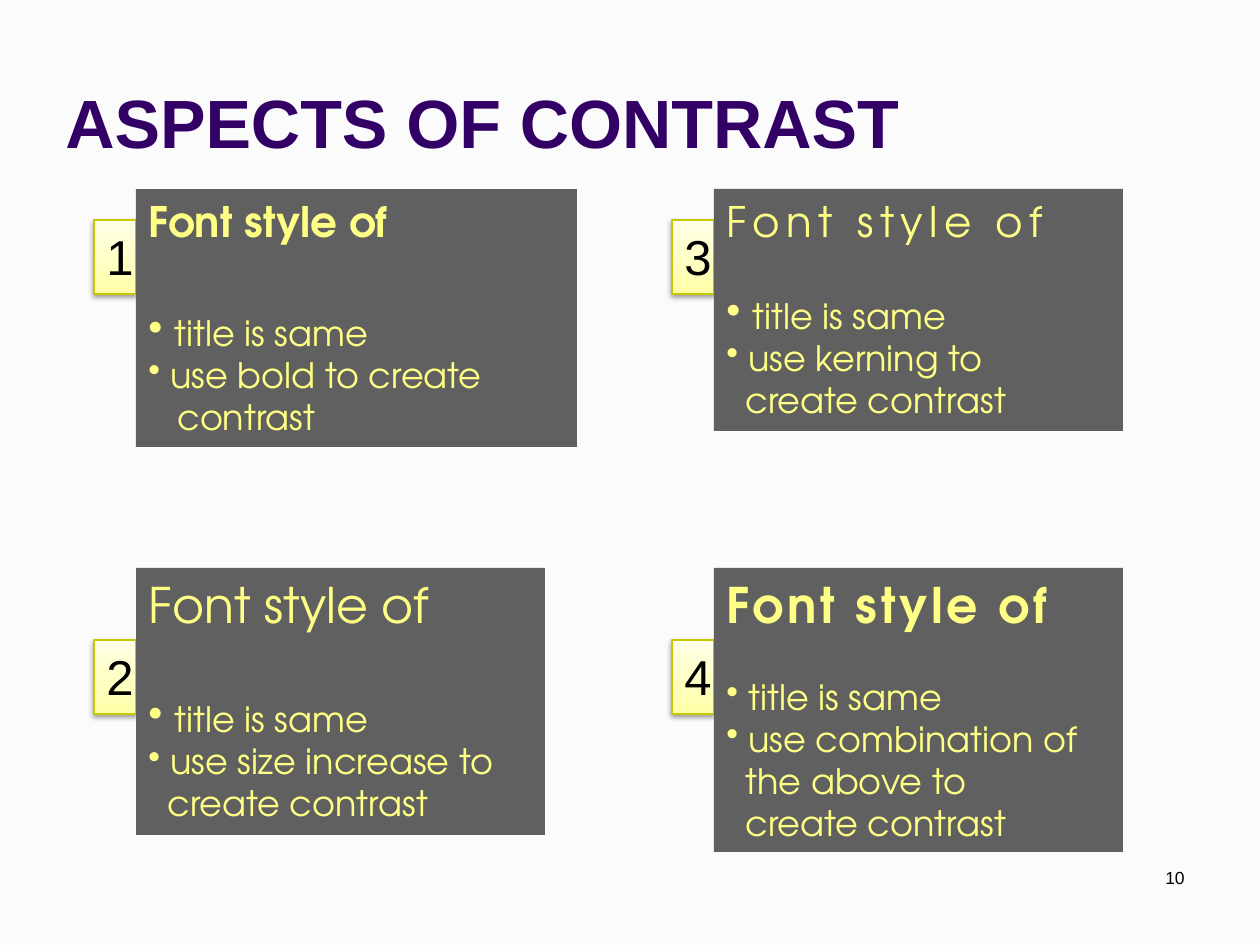
from pptx import Presentation
from pptx.dml.color import RGBColor
from pptx.enum.shapes import MSO_SHAPE
from pptx.enum.text import MSO_ANCHOR, PP_ALIGN
from pptx.oxml import parse_xml
from pptx.oxml.ns import nsdecls
from pptx.util import Emu, Pt

RECT = MSO_SHAPE.RECTANGLE
TOP, BOTTOM = MSO_ANCHOR.TOP, MSO_ANCHOR.BOTTOM
LEFT, RIGHT = PP_ALIGN.LEFT, PP_ALIGN.RIGHT

# Content
TITLE = "ASPECTS OF CONTRAST"
PAGE = "10"
HEAD = "Font style of"
FIRST = "title is same"
# gap: points above the list; mark: bullet size of its first line in percent
# hang: px indent of first line, second line and the lines that follow
CARDS = [
    dict(num="1", col=0, row=0, w=441, h=258, size=24, bold=True, track=0,
         gap=37.5, mark=120, hang=(26, 22, 29),
         lines=["use bold to create", "contrast"]),
    dict(num="2", col=0, row=1, w=409, h=267, size=28, bold=False, track=0,
         gap=37, mark=120, hang=(26, 22, 19),
         lines=["use size increase to", "create contrast"]),
    dict(num="3", col=1, row=0, w=409, h=242, size=24, bold=False, track=360,
         gap=28, mark=120, hang=(26, 22, 19),
         lines=["use kerning to", "create contrast"]),
    dict(num="4", col=1, row=1, w=409, h=284, size=28, bold=True, track=200,
         gap=24, mark=100, hang=(22, 22, 19),
         lines=["use combination of", "the above to", "create contrast"]),
]

# Theme
THEME = dict(
    back="FBFBFB", title="330066", ink="000000", card="606060",
    text="FFFF85", edge="C8C800",
    glow=[(0, "FFFFA5"), (35, "FFFFBF"), (100, "FFFFE7")],
    sans="Arial", round="TeX Gyre Adventor",
    big=39, badge=28, body=20, small=10,
)

# Layout in px
SCALE = 914400 / 126
COLS, ROWS = (136, 714), (189, 568)
BADGE_TOPS = (220, 640)
BADGE_W, BADGE_H = 42, 74


def px(n):
    return Emu(round(n * SCALE))


def rgb(name):
    return RGBColor.from_string(THEME[name])


def write(para, text, face, size, color, bold=False, align=LEFT):
    para.alignment = align
    run = para.add_run()
    run.text = text
    style = dict(name=THEME[face], size=Pt(size), bold=bold)
    for key, val in style.items():
        setattr(run.font, key, val)
    run.font.color.rgb = rgb(color)
    return run


def label(slide, box, text, size, color, bold=False, align=LEFT, anchor=TOP):
    frame = slide.shapes.add_textbox(*map(px, box)).text_frame
    frame.word_wrap = True
    frame.vertical_anchor = anchor
    write(frame.paragraphs[0], text, "sans", size, color, bold, align)


def block(slide, *box):
    shape = slide.shapes.add_shape(RECT, *map(px, box))
    shape.shadow.inherit = False
    shape.text_frame.word_wrap = True
    shape.text_frame.vertical_anchor = TOP
    return shape


def badge(slide, card):
    shape = block(slide, COLS[card["col"]] - BADGE_W, BADGE_TOPS[card["row"]],
                  BADGE_W, BADGE_H)
    shape.line.color.rgb = rgb("edge")
    shape.line.width = Pt(0.75)
    # Gradient from the bottom up, and a soft shadow
    stops = "".join(
        f'<a:gs pos="{pos * 1000}"><a:srgbClr val="{color}"/></a:gs>'
        for pos, color in THEME["glow"])
    props = shape.element.spPr
    props.insert(2, parse_xml(
        f'<a:gradFill {nsdecls("a")} rotWithShape="1"><a:gsLst>{stops}</a:gsLst>'
        '<a:lin ang="16200000" scaled="0"/></a:gradFill>'))
    props[-1].append(parse_xml(
        f'<a:outerShdw {nsdecls("a")} blurRad="{Pt(3.1)}" dist="{Pt(1.6)}" '
        'dir="5400000" rotWithShape="0"><a:srgbClr val="000000">'
        '<a:alpha val="38000"/></a:srgbClr></a:outerShdw>'))
    write(shape.text_frame.paragraphs[0], card["num"], "sans",
          THEME["badge"], "ink")


def bullet(para, hang, mark):
    props = para._p.get_or_add_pPr()
    props.set("marL", str(px(hang)))
    props.set("indent", str(-px(hang) if mark else 0))
    if mark:
        for tag in (f'buSzPct {nsdecls("a")} val="{mark * 1000}"',
                    f'buChar {nsdecls("a")} char="•"'):
            props.append(parse_xml(f"<a:{tag}/>"))


def panel(slide, card):
    shape = block(slide, COLS[card["col"]], ROWS[card["row"]],
                  card["w"], card["h"])
    shape.fill.solid()
    shape.fill.fore_color.rgb = rgb("card")
    shape.line.fill.background()
    frame = shape.text_frame
    head = write(frame.paragraphs[0], HEAD, "round", card["size"], "text",
                 card["bold"])
    if card["track"]:
        head.font._element.set("spc", str(card["track"]))
    marks = (card["mark"], 100, 0)
    for i, text in enumerate([FIRST] + card["lines"]):
        para = frame.add_paragraph()
        step = min(i, 2)
        bullet(para, card["hang"][step], marks[step])
        if i == 0:
            para.space_before = Pt(card["gap"])
        write(para, text, "round", THEME["body"], "text")


def main():
    deck = Presentation()
    deck.slide_width, deck.slide_height = px(1260), px(945)
    slide = deck.slides.add_slide(deck.slide_layouts[6])
    slide.background.fill.solid()
    slide.background.fill.fore_color.rgb = rgb("back")

    # Title, numbered cards, page number
    label(slide, (53, 32, 1134, 136), TITLE, THEME["big"], "title",
          bold=True, anchor=BOTTOM)
    for card in CARDS:
        badge(slide, card)
        panel(slide, card)
    label(slide, (903, 861, 294, 63), PAGE, THEME["small"], "ink", align=RIGHT)
    deck.save("out.pptx")


if __name__ == "__main__":
    main()
